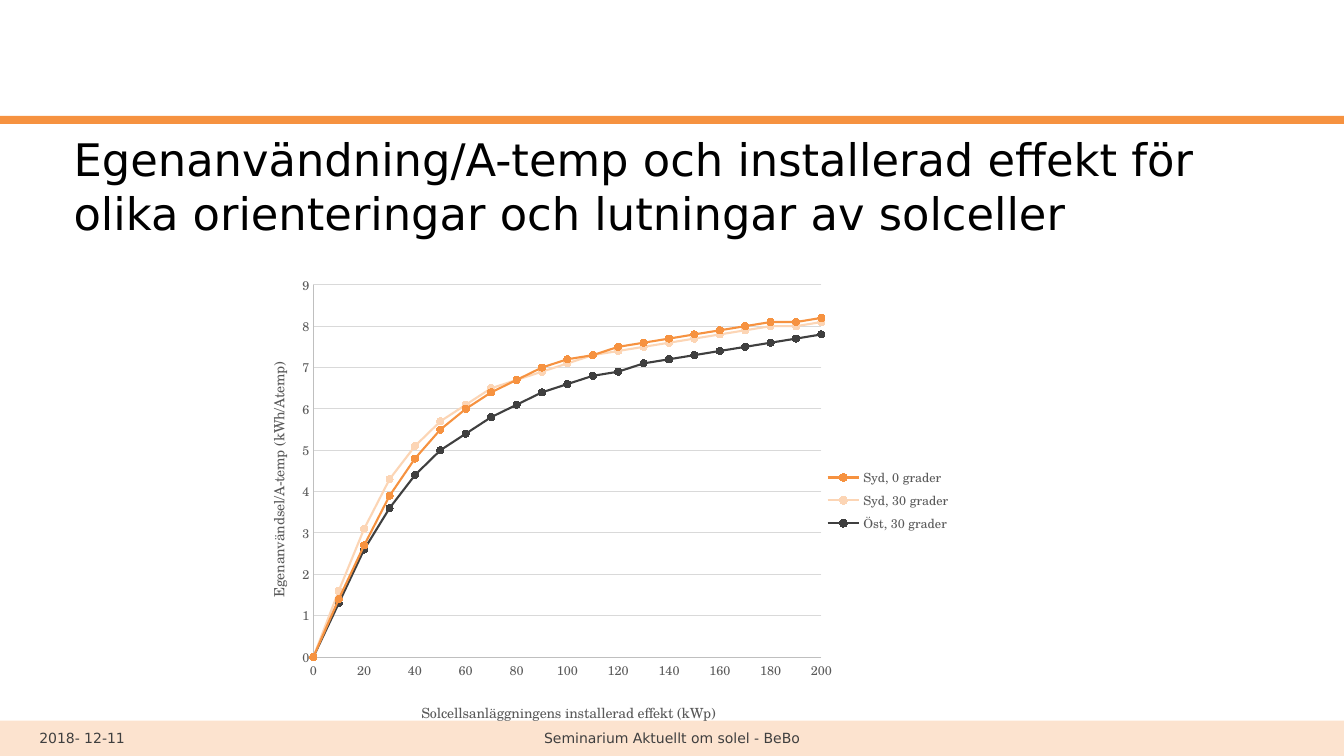
from dataclasses import dataclass
from lxml.etree import SubElement
from pptx import Presentation
from pptx.chart.data import XyChartData
from pptx.dml.color import RGBColor
from pptx.enum.chart import (XL_CHART_TYPE, XL_LEGEND_POSITION,
                             XL_MARKER_STYLE, XL_TICK_MARK)
from pptx.enum.shapes import MSO_SHAPE
from pptx.enum.text import MSO_ANCHOR, MSO_AUTO_SIZE, PP_ALIGN
from pptx.oxml import parse_xml
from pptx.oxml.ns import nsdecls, qn
from pptx.util import Inches, Pt


@dataclass(frozen=True)
class Theme:
    orange: str = "F69240"
    peach: str = "FCD5B5"
    dark: str = "3F3F3F"
    black: str = "000000"
    gray: str = "595959"
    axis: str = "BFBFBF"
    grid: str = "D9D9D9"
    sans: str = "DejaVu Sans"
    serif: str = "TeX Gyre Schola"
    head: int = 32
    small: int = 10
    tick: int = 9


THEME = Theme()
POWER = range(0, 201, 10)
SERIES = [
    ("Syd, 0 grader", THEME.orange,
     [0, 1.4, 2.7, 3.9, 4.8, 5.5, 6, 6.4, 6.7, 7, 7.2,
      7.3, 7.5, 7.6, 7.7, 7.8, 7.9, 8, 8.1, 8.1, 8.2]),
    ("Syd, 30 grader", THEME.peach,
     [0, 1.6, 3.1, 4.3, 5.1, 5.7, 6.1, 6.5, 6.7, 6.9, 7.1,
      7.3, 7.4, 7.5, 7.6, 7.7, 7.8, 7.9, 8, 8, 8.1]),
    ("Öst, 30 grader", THEME.dark,
     [0, 1.3, 2.6, 3.6, 4.4, 5, 5.4, 5.8, 6.1, 6.4, 6.6,
      6.8, 6.9, 7.1, 7.2, 7.3, 7.4, 7.5, 7.6, 7.7, 7.8]),
]


def rgb(code):
    return RGBColor.from_string(code)


def style(font, size, color, face):
    font.size, font.name, font.bold = Pt(size), face, False
    font.color.rgb = rgb(color)


def stroke(line, color, width):
    line.color.rgb = rgb(color)
    line.width = Pt(width)


def place(shape, box):
    shape.left, shape.top, shape.width, shape.height = map(Inches, box)


def write(frame, text, size, color, side=0, align=PP_ALIGN.LEFT,
          anchor=MSO_ANCHOR.MIDDLE):
    frame.word_wrap = True
    frame.auto_size = MSO_AUTO_SIZE.NONE
    frame.vertical_anchor = anchor
    frame.margin_top = frame.margin_bottom = 0
    frame.margin_left = frame.margin_right = Inches(side)
    para = frame.paragraphs[0]
    para.alignment = align
    run = para.add_run()
    run.text = text
    style(run.font, size, color, THEME.sans)


def add_bar(slide, box, alpha=100):
    bar = slide.shapes.add_shape(MSO_SHAPE.RECTANGLE, *map(Inches, box))
    bar.shadow.inherit = False
    bar.line.fill.background()
    bar.fill.solid()
    bar.fill.fore_color.rgb = rgb(THEME.orange)
    if alpha < 100:
        color = bar.fill._xPr.find(".//" + qn("a:srgbClr"))
        SubElement(color, qn("a:alpha"), val=str(alpha * 1000))


def add_title(slide, box):
    title = slide.shapes.title
    place(title, box)
    write(title.text_frame, "Egenanvändning/A-temp och installerad effekt för "
          "olika orienteringar och lutningar av solceller",
          THEME.head, THEME.black, anchor=MSO_ANCHOR.TOP)


def add_footer(slide, box):
    left, top, width, height = box
    add_bar(slide, box, alpha=25)
    notes = [("2018- 12-11", 0.39, 1.46, 0, PP_ALIGN.LEFT),
             ("Seminarium Aktuellt om solel - BeBo", 1.84, 9.65, 0.59,
              PP_ALIGN.CENTER)]
    for text, start, wide, side, align in notes:
        note = slide.shapes.add_textbox(0, 0, 0, 0)
        place(note, (left + start, top + 0.05, wide, 0.24))
        write(note.text_frame, text, THEME.small, THEME.dark, side, align)


def set_layout(parent, spot, after=None):
    """Pin a chart part at fractions of the chart's size."""
    for old in parent.findall(qn("c:layout")):
        parent.remove(old)
    tags = [("xMode", "edge"), ("yMode", "edge"), *zip("xywh", spot)]
    if len(spot) == 4:
        tags.insert(0, ("layoutTarget", "inner"))
    inner = "".join(f'<c:{tag} val="{val}"/>' for tag, val in tags)
    layout = parse_xml(f'<c:layout {nsdecls("c")}><c:manualLayout>{inner}'
                       '</c:manualLayout></c:layout>')
    if after is None:
        parent.insert(0, layout)
    else:
        after.addnext(layout)


def set_axis(axis, text, spot, top, step):
    axis.minimum_scale, axis.maximum_scale = 0, top
    axis.major_unit = step
    axis.major_tick_mark = axis.minor_tick_mark = XL_TICK_MARK.NONE
    stroke(axis.format.line, THEME.axis, 0.75)
    labels = axis.tick_labels
    labels.number_format, labels.number_format_is_linked = "0", False
    style(labels.font, THEME.tick, THEME.gray, THEME.serif)
    title = axis.axis_title
    run = title.text_frame.paragraphs[0].add_run()
    run.text = text
    style(run.font, THEME.small, THEME.gray, THEME.serif)
    node = title._element
    set_layout(node, spot, node.find(qn("c:tx")))


def add_graph(slide, box):
    data = XyChartData()
    for name, _, vals in SERIES:
        series = data.add_series(name)
        for x, y in zip(POWER, vals):
            series.add_data_point(x, y)
    chart = slide.shapes.add_chart(XL_CHART_TYPE.XY_SCATTER_SMOOTH,
                                   *map(Inches, box), data).chart
    chart.has_title = False
    style(chart.font, THEME.small, THEME.black, THEME.serif)

    # Clear background, so the footer band shows through
    root = chart._chartSpace
    root.find(qn("c:chart")).addnext(parse_xml(
        f'<c:spPr {nsdecls("c", "a")}><a:noFill/>'
        '<a:ln><a:noFill/></a:ln></c:spPr>'))
    set_layout(root.find(".//" + qn("c:plotArea")), (0.098, 0.042, 0.708, 0.791))

    # Axes and grid
    across, up = chart.category_axis, chart.value_axis
    set_axis(across, "Solcellsanläggningens installerad effekt (kWp)",
             (0.245, 0.92), 200, 20)
    set_axis(up, "Egenanvändsel/A-temp (kWh/Atemp)", (0.03, 0.2), 9, 1)
    across.has_major_gridlines = False
    up.has_major_gridlines = True
    stroke(up.major_gridlines.format.line, THEME.grid, 0.75)

    # Legend
    chart.has_legend = True
    chart.legend.position = XL_LEGEND_POSITION.RIGHT
    chart.legend.include_in_layout = False
    style(chart.legend.font, THEME.tick, THEME.gray, THEME.serif)

    # Curves
    plot = chart.plots[0]
    plot.vary_by_categories = False
    for series, (_, color, _) in zip(plot.series, SERIES):
        series.smooth = True
        stroke(series.format.line, color, 1.5)
        mark = series.marker
        mark.style, mark.size = XL_MARKER_STYLE.CIRCLE, 5
        mark.format.fill.solid()
        mark.format.fill.fore_color.rgb = rgb(color)
        stroke(mark.format.line, color, 0.75)


def main():
    deck = Presentation()
    deck.slide_width, deck.slide_height = Inches(13.33), Inches(7.5)
    slide = deck.slides.add_slide(deck.slide_layouts[5])
    add_footer(slide, (0, 7.15, 13.33, 0.35))
    add_bar(slide, (-0.02, 1.15, 13.39, 0.08))
    add_title(slide, (0.73, 1.31, 11.62, 1.42))
    add_graph(slide, (2.41, 2.63, 7.12, 4.67))
    deck.save("out.pptx")


if __name__ == "__main__":
    main()
